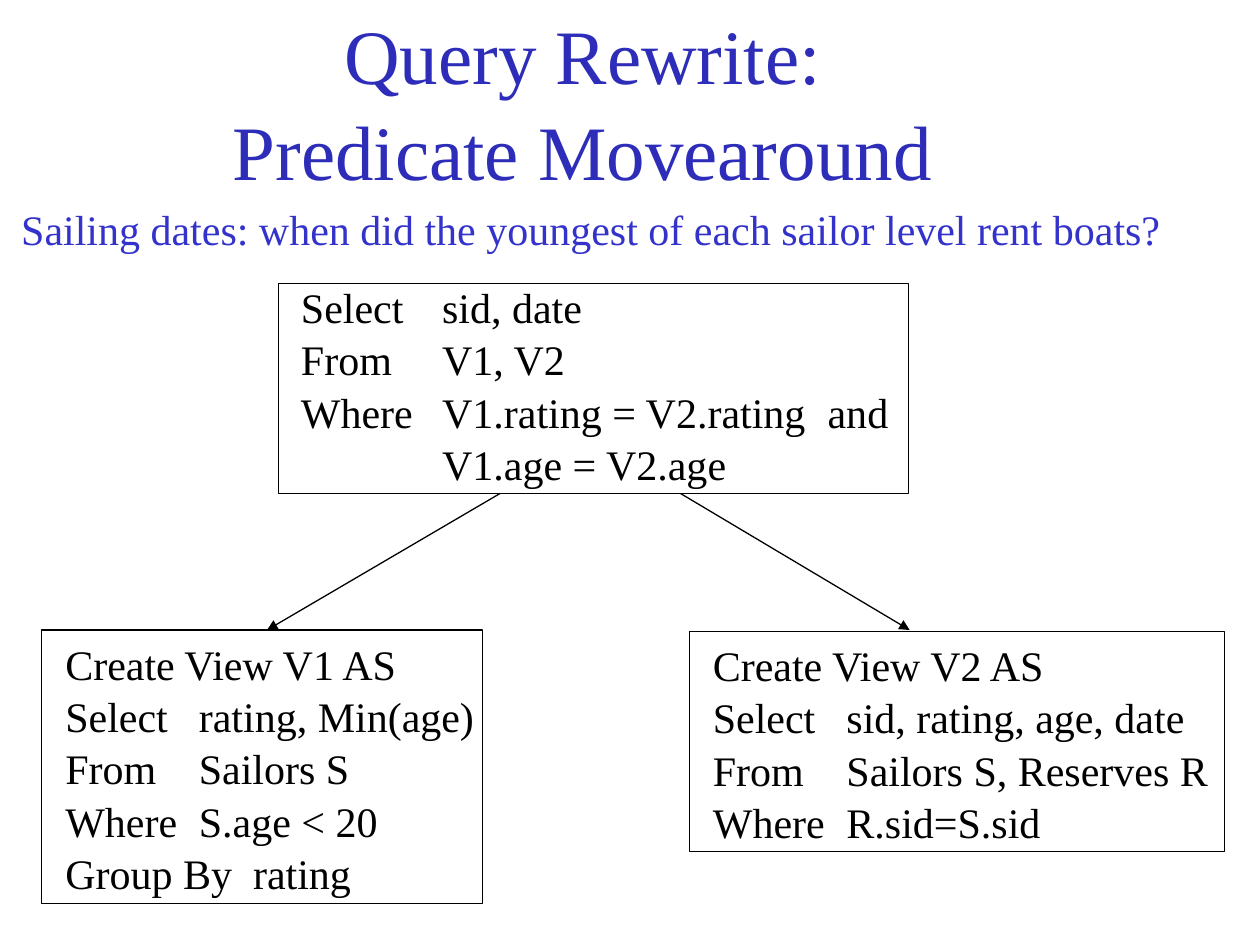
import pptx
import pptx.util
import pptx.dml.color
import pptx.enum.shapes
import pptx.enum.text
import pptx.oxml.ns
import lxml.etree
from dataclasses import dataclass

Inches = pptx.util.Inches
qn = pptx.oxml.ns.qn


@dataclass
class Theme:
    font: str = "Times New Roman"
    title_color: str = "2D2DB9"
    accent: str = "3333CC"
    ink: str = "000000"
    paper: str = "FFFFFF"
    title_size: int = 44
    text_size: int = 24
    line_width: float = 0.75
    line_spacing: float = 1.04


def rgb(value):
    return pptx.dml.color.RGBColor.from_string(value)


def write_text(frame, text, *, theme, size, color, align="LEFT", anchor="TOP", tabs=()):
    frame.text = text
    frame.vertical_anchor = getattr(pptx.enum.text.MSO_ANCHOR, anchor)
    for para in frame.paragraphs:
        para.alignment = getattr(pptx.enum.text.PP_ALIGN, align)
        para.line_spacing = theme.line_spacing
        para.space_before = pptx.util.Pt(0)
        for span in para.runs:
            span.font.name = theme.font
            span.font.size = pptx.util.Pt(size)
            span.font.color.rgb = rgb(color)
        if tabs:
            properties = para._p.get_or_add_pPr()
            stops = lxml.etree.SubElement(properties, qn("a:tabLst"))
            for position in tabs:
                lxml.etree.SubElement(stops, qn("a:tab"), pos=str(Inches(position)), algn="l")


class Page:
    def __init__(self, deck, theme):
        self.theme = theme
        self.slide = deck.slides.add_slide(deck.slide_layouts[5])
        self.slide.background.fill.solid()
        self.slide.background.fill.fore_color.rgb = rgb(theme.paper)

    def title(self, text, left, top, width, height):
        box = self.slide.shapes.title
        box.left, box.top = Inches(left), Inches(top)
        box.width, box.height = Inches(width), Inches(height)
        write_text(box.text_frame, text, theme=self.theme, size=self.theme.title_size,
                   color=self.theme.title_color, align="CENTER", anchor="MIDDLE")

    def text(self, text, left, top, width, height, color, tabs=()):
        box = self.slide.shapes.add_textbox(*map(Inches, (left, top, width, height)))
        box.text_frame.word_wrap = False
        write_text(box.text_frame, text, theme=self.theme, size=self.theme.text_size,
                   color=color, tabs=tabs)

    def frame(self, left, top, width, height):
        box = self.slide.shapes.add_shape(pptx.enum.shapes.MSO_SHAPE.RECTANGLE,
                                          *map(Inches, (left, top, width, height)))
        box.shadow.inherit = False
        box.fill.solid()
        box.fill.fore_color.rgb = rgb(self.theme.paper)
        self.outline(box.line)

    def outline(self, line):
        line.color.rgb = rgb(self.theme.ink)
        line.width = pptx.util.Pt(self.theme.line_width)

    def arrow(self, *ends):
        arrow = self.slide.shapes.add_connector(pptx.enum.shapes.MSO_CONNECTOR.STRAIGHT,
                                                *map(Inches, ends))
        self.outline(arrow.line)
        lxml.etree.SubElement(arrow.line._get_or_add_ln(), qn("a:tailEnd"), type="triangle")
        lxml.etree.SubElement(arrow._element.spPr, qn("a:effectLst"))

    def query(self, lines, frame, text, tabs):
        self.frame(*frame)
        self.text("\n".join(lines), *text, self.theme.ink, tabs)


def main():
    deck = pptx.Presentation()
    deck.slide_width, deck.slide_height = Inches(10), Inches(7.5)
    theme = Theme()
    page = Page(deck, theme)

    page.title("Query Rewrite:\vPredicate Movearound", 1.5, 0.17, 6.25, 1.25)
    page.arrow(3.98, 3.91, 2.12, 5)
    page.arrow(5.39, 3.91, 7.22, 5)
    page.text("Sailing dates: when did the youngest of each sailor level rent boats?",
              0.07, 1.55, 9.32, 0.5, theme.accent)

    page.query(["Create View V1 AS", "Select\trating, Min(age)", "From\tSailors S",
                "Where\tS.age < 20", "Group By\trating"],
               (0.33, 5, 3.5, 2.17), (0.42, 5, 3.45, 2.1), (1.06, 1.49))
    page.query(["Create View V2 AS", "Select\tsid, rating, age, date",
                "From\tSailors S, Reserves R", "Where\tR.sid=S.sid"],
               (5.47, 5.01, 4.25, 1.75), (5.56, 5.01, 4.13, 1.7), (1.06,))
    page.query(["Select\tsid, date", "From\tV1, V2",
                "Where\tV1.rating = V2.rating\tand", "\tV1.age = V2.age"],
               (2.21, 2.25, 5, 1.67), (2.29, 2.17, 4.88, 1.7), (1.12, 4.18))

    deck.save("out.pptx")


if __name__ == "__main__":
    main()
